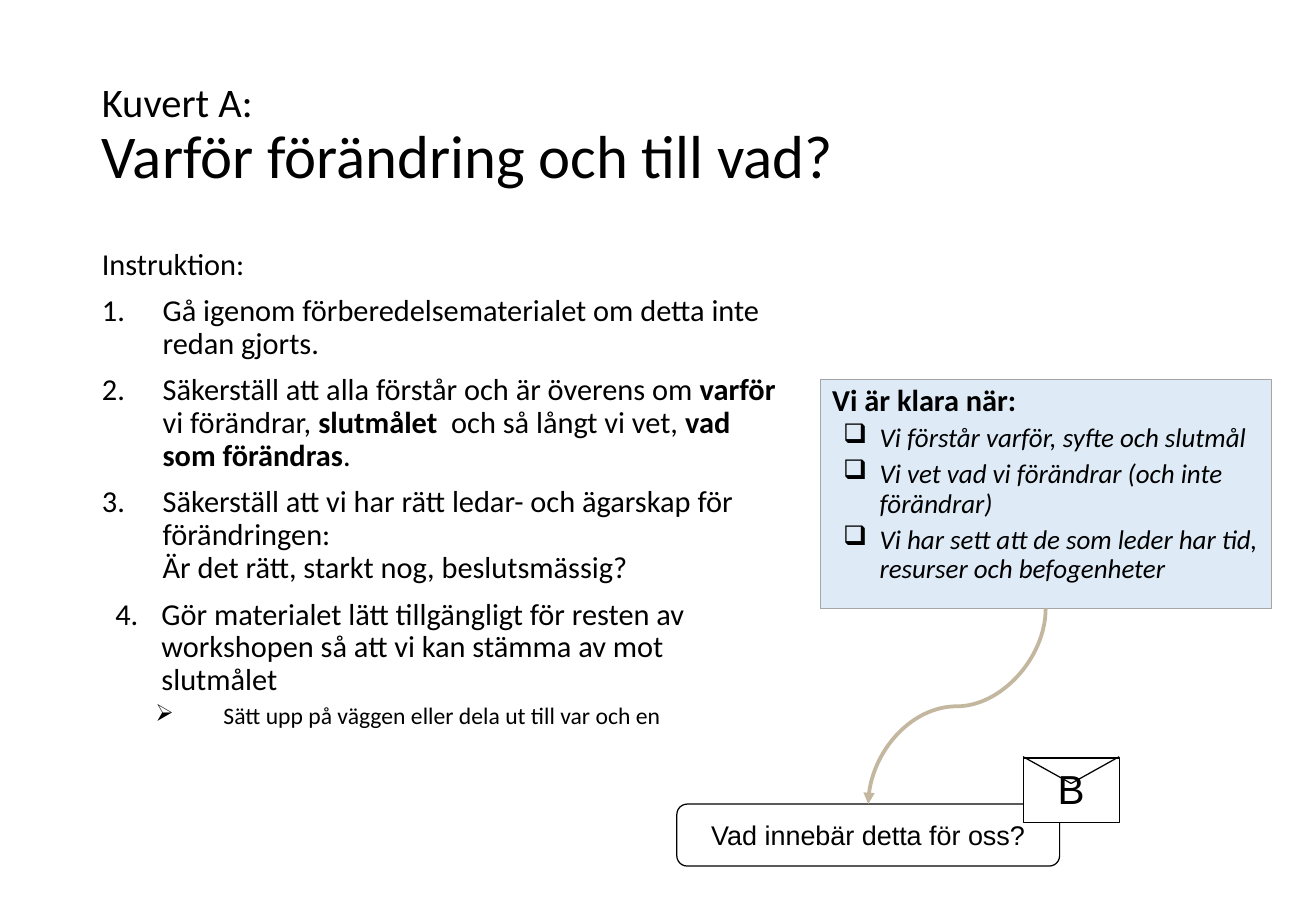
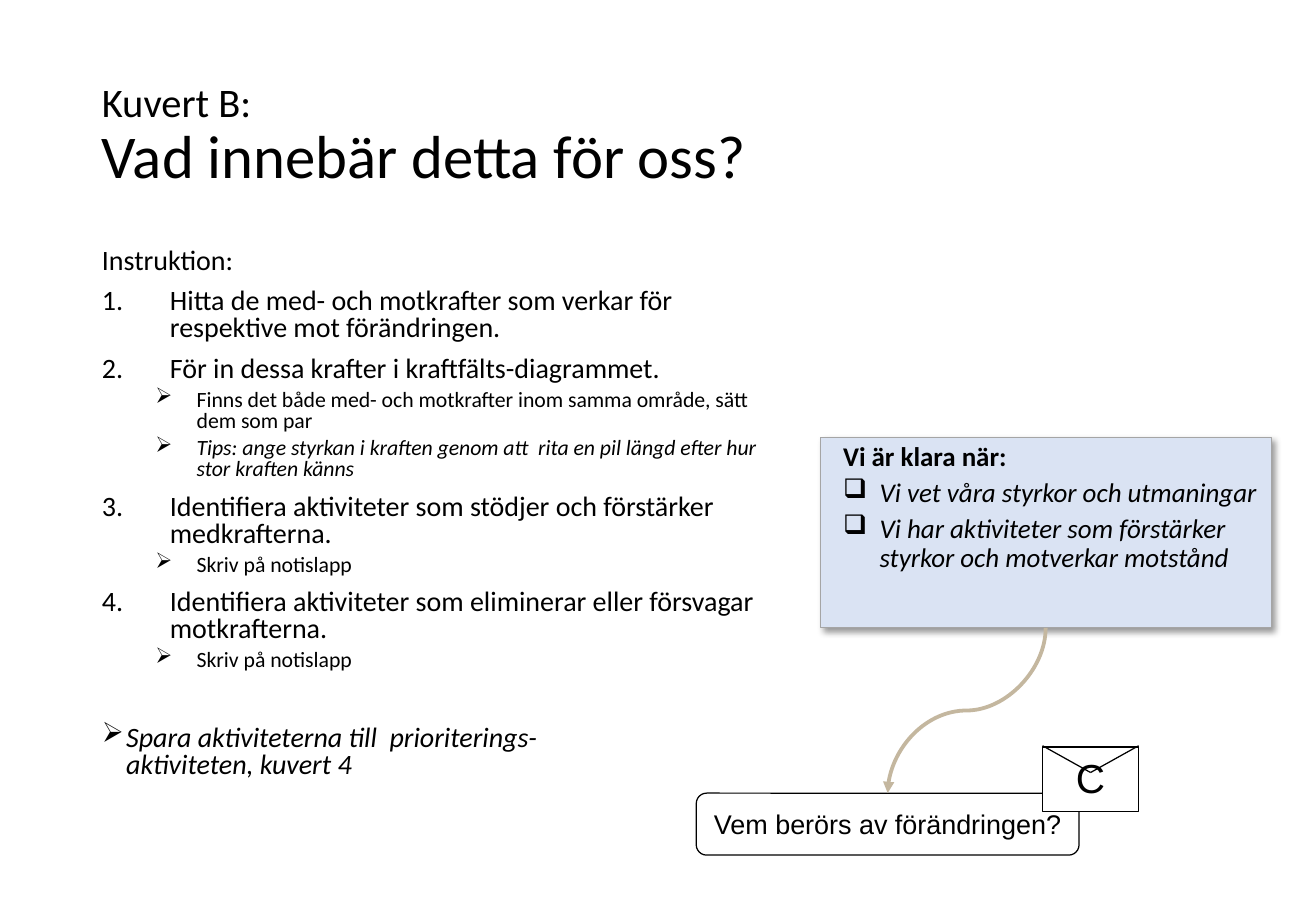
"""Two workshop slides: instructions, a checklist and the next envelope."""
from lxml import etree
from pptx import Presentation
from pptx.dml.color import RGBColor
from pptx.enum import shapes, text
from pptx.oxml import ns
from pptx.util import Inches, Pt

BLACK = RGBColor(0x00, 0x00, 0x00)
WHITE = RGBColor(0xFF, 0xFF, 0xFF)
GREY = RGBColor(0xA5, 0xA5, 0xA5)
SAND = RGBColor(0xC4, 0xB7, 0x9F)
ICE = RGBColor(0xDE, 0xEB, 0xF7)
MIST = RGBColor(0xDA, 0xE3, 0xF3)

STYLES = {
    "small": dict(size=24),
    "large": dict(size=36),
    "lead": dict(size=18, before=8.1),
    "step": dict(size=18, before=8.1, left=0.5, hang=0.5, mark="1."),
    "last": dict(size=18, before=8.1, left=0.49, hang=0.38, mark="1."),
    "note": dict(size=14, before=4.1, left=1, hang=0.56, mark="➢", level=1),
    "lead2": dict(size=16.6, before=8.1),
    "step2": dict(size=16.6, before=8.1, left=0.56, hang=0.56, mark="1."),
    "note2": dict(size=12.9, before=4.1, left=0.78, hang=0.34, mark="➢", level=1),
    "tip2": dict(size=12.9, before=4.1, left=0.78, hang=0.34, mark="➢", level=1,
                 italic=True),
    "save2": dict(size=16.6, before=32.4, left=0.2, hang=0.2, mark="➢", italic=True),
    "done": dict(size=18, bold=True),
    "done2": dict(size=16, left=0.09, level=1, bold=True),
    "check": dict(size=16, before=4.1, left=0.39, hang=0.3, mark="❑", level=1,
                  italic=True),
}

SLIDES = [
    dict(
        title=[("small", "Kuvert A:"), ("large", "Varför förändring och till vad?")],
        body=[
            ("lead", "Instruktion:"),
            ("step", "Gå igenom förberedelsematerialet om detta inte redan gjorts."),
            ("step", "Säkerställ att alla förstår och är överens om *varför* vi förändrar, "
                     "*slutmålet*  och så långt vi vet, *vad som förändras*."),
            ("step", "Säkerställ att vi har rätt ledar- och ägarskap för förändringen:\n"
                     "Är det rätt, starkt nog, beslutsmässig?"),
            ("last", "Gör materialet lätt tillgängligt för resten av workshopen "
                     "så att vi kan stämma av mot slutmålet"),
            ("note", "Sätt upp på väggen eller dela ut till var och en"),
        ],
        spacing=0.9,
        checks=[
            ("done", "Vi är klara när:"),
            ("check", "Vi förstår varför, syfte och slutmål"),
            ("check", "Vi vet vad vi förändrar (och inte förändrar)"),
            ("check", "Vi har sett att de som leder har tid, resurser och befogenheter"),
        ],
        top=3.12, height=1.89, fill=ICE, shadow=False,
        next="Vad innebär detta för oss?", letter="B", spot=(5.57, 6.62),
    ),
    dict(
        title=[("small", "Kuvert B:"), ("large", "Vad innebär detta för oss?")],
        body=[
            ("lead2", "Instruktion:"),
            ("step2", "Hitta de med- och motkrafter som verkar för respektive mot "
                      "förändringen."),
            ("step2", "För in dessa krafter i kraftfälts-diagrammet."),
            ("note2", "Finns det både med- och motkrafter inom samma område, "
                      "sätt dem som par"),
            ("tip2", "Tips: ange styrkan i kraften genom att  rita en pil längd "
                     "efter hur stor kraften känns"),
            ("step2", "Identifiera aktiviteter som stödjer och förstärker medkrafterna."),
            ("note2", "Skriv på notislapp"),
            ("step2", "Identifiera aktiviteter som eliminerar eller försvagar "
                      "motkrafterna."),
            ("note2", "Skriv på notislapp"),
            ("save2", "Spara aktiviteterna till  prioriterings-\naktiviteten, kuvert 4"),
        ],
        spacing=0.8,
        checks=[
            ("done2", "Vi är klara när:"),
            ("check", "Vi vet våra styrkor och utmaningar"),
            ("check", "Vi har aktiviteter som förstärker styrkor och motverkar motstånd"),
        ],
        top=3.6, height=1.57, fill=MIST, shadow=True,
        next="Vem berörs av förändringen?", letter="C", spot=(5.73, 6.53),
    ),
]


def add(parent, tag, **attrs):
    node = etree.SubElement(parent, ns.qn(tag))
    for key, value in attrs.items():
        node.set(key, str(value))
    return node


def write(para, words, size, before=0, left=0, hang=0, mark=None, level=0,
          bold=False, italic=False, face="Calibri"):
    props = para._p.get_or_add_pPr()
    props.set("marL", str(Inches(left)))
    props.set("indent", str(-Inches(hang)))
    if mark == "1.":
        add(props, "a:buAutoNum", type="arabicPeriod")
    elif mark:
        add(props, "a:buChar", char=mark)
    else:
        add(props, "a:buNone")
    para.level = level
    para.space_before = Pt(before)
    for i, part in enumerate(words.split("*")):
        for j, line in enumerate(part.split("\n")):
            if j:
                para.add_line_break()
            run = para.add_run()
            run.text = line
            font = run.font
            font.name, font.size, font.color.rgb = face, Pt(size), BLACK
            font.bold, font.italic = bold or i % 2 == 1, italic


def fill_text(shape, rows, spacing, anchor=text.MSO_ANCHOR.TOP):
    frame = shape.text_frame
    frame.word_wrap = True
    frame.vertical_anchor = anchor
    for i, (style, words) in enumerate(rows):
        para = frame.add_paragraph() if i else frame.paragraphs[0]
        para.alignment = text.PP_ALIGN.LEFT
        para.line_spacing = spacing
        look = dict(STYLES[style])
        if not i:
            look["before"] = 0
        write(para, words, **look)


def text_box(slide, place, rows, spacing, anchor=text.MSO_ANCHOR.TOP):
    box = slide.shapes.add_textbox(*map(Inches, place))
    fill_text(box, rows, spacing, anchor)


def panel(slide, kind, place, fill, edge, width):
    shape = slide.shapes.add_shape(kind, *map(Inches, place))
    shape.shadow.inherit = False
    shape.fill.solid()
    shape.fill.fore_color.rgb = fill
    shape.line.color.rgb = edge
    shape.line.width = Pt(width)
    return shape


def label(shape, words, size, anchor):
    frame = shape.text_frame
    frame.word_wrap = True
    frame.vertical_anchor = anchor
    para = frame.paragraphs[0]
    write(para, words, size, face="Arial")
    para.alignment = text.PP_ALIGN.CENTER


def link(slide, kind, start, end, color, width):
    line = slide.shapes.add_connector(kind, *map(Inches, start + end))
    line.line.color.rgb = color
    line.line.width = Pt(width)
    add(line._element.spPr, "a:effectLst")
    return line


def curve(slide, start, end):
    mid_x, mid_y = (start[0] + end[0]) / 2, (start[1] + end[1]) / 2
    half_w, half_h = (end[1] - start[1]) / 2, (start[0] - end[0]) / 2
    line = link(slide, shapes.MSO_CONNECTOR.CURVE, (mid_x - half_w, mid_y - half_h),
                (mid_x + half_w, mid_y + half_h), SAND, 2.25)
    line._element.spPr.xfrm.set("rot", "5400000")
    add(line.line._get_or_add_ln(), "a:tailEnd", type="triangle")


def drop_shadow(shape):
    effects = shape._element.spPr.find(ns.qn("a:effectLst"))
    shade = add(effects, "a:outerShdw", blurRad=Pt(4), dist=Pt(3), dir=45 * 60000,
                algn="tl", rotWithShape=0)
    add(add(shade, "a:srgbClr", val=BLACK), "a:alpha", val=40000)


def envelope(slide, x, y, letter):
    wide, tall, lift, flap = 0.79, 0.53, 0.01, 0.21
    kind = shapes.MSO_SHAPE.RECTANGLE
    box = panel(slide, kind, (x, y, wide, tall), WHITE, BLACK, 0.75)
    label(box, letter, 24, text.MSO_ANCHOR.TOP)
    for side in (x, x + wide):
        link(slide, shapes.MSO_CONNECTOR.STRAIGHT, (side, y - lift),
             (x + wide / 2, y + flap), BLACK, 0.75)


def build(slide, data):
    text_box(slide, (0.74, 0.4, 9.34, 1.45), data["title"], 0.9, text.MSO_ANCHOR.MIDDLE)
    text_box(slide, (0.74, 2, 5.82, 4.76), data["body"], data["spacing"])

    left, wide = 6.75, 3.71
    place = (left, data["top"], wide, data["height"])
    goals = panel(slide, shapes.MSO_SHAPE.RECTANGLE, place, data["fill"], GREY, 0.5)
    fill_text(goals, data["checks"], 0.9)
    if data["shadow"]:
        drop_shadow(goals)

    x, y = data["spot"]
    span = 3.15
    kind = shapes.MSO_SHAPE.ROUNDED_RECTANGLE
    step = panel(slide, kind, (x, y, span, 0.51), WHITE, BLACK, 0.75)
    label(step, data["next"], 16, text.MSO_ANCHOR.MIDDLE)
    envelope(slide, x + 2.85, y - 0.38, data["letter"])
    curve(slide, (left + wide / 2, data["top"] + data["height"]), (x + span / 2, y))


def main():
    deck = Presentation()
    deck.slide_width, deck.slide_height = Inches(10.83), Inches(7.5)
    for data in SLIDES:
        build(deck.slides.add_slide(deck.slide_layouts[6]), data)
    deck.save("out.pptx")


if __name__ == "__main__":
    main()
